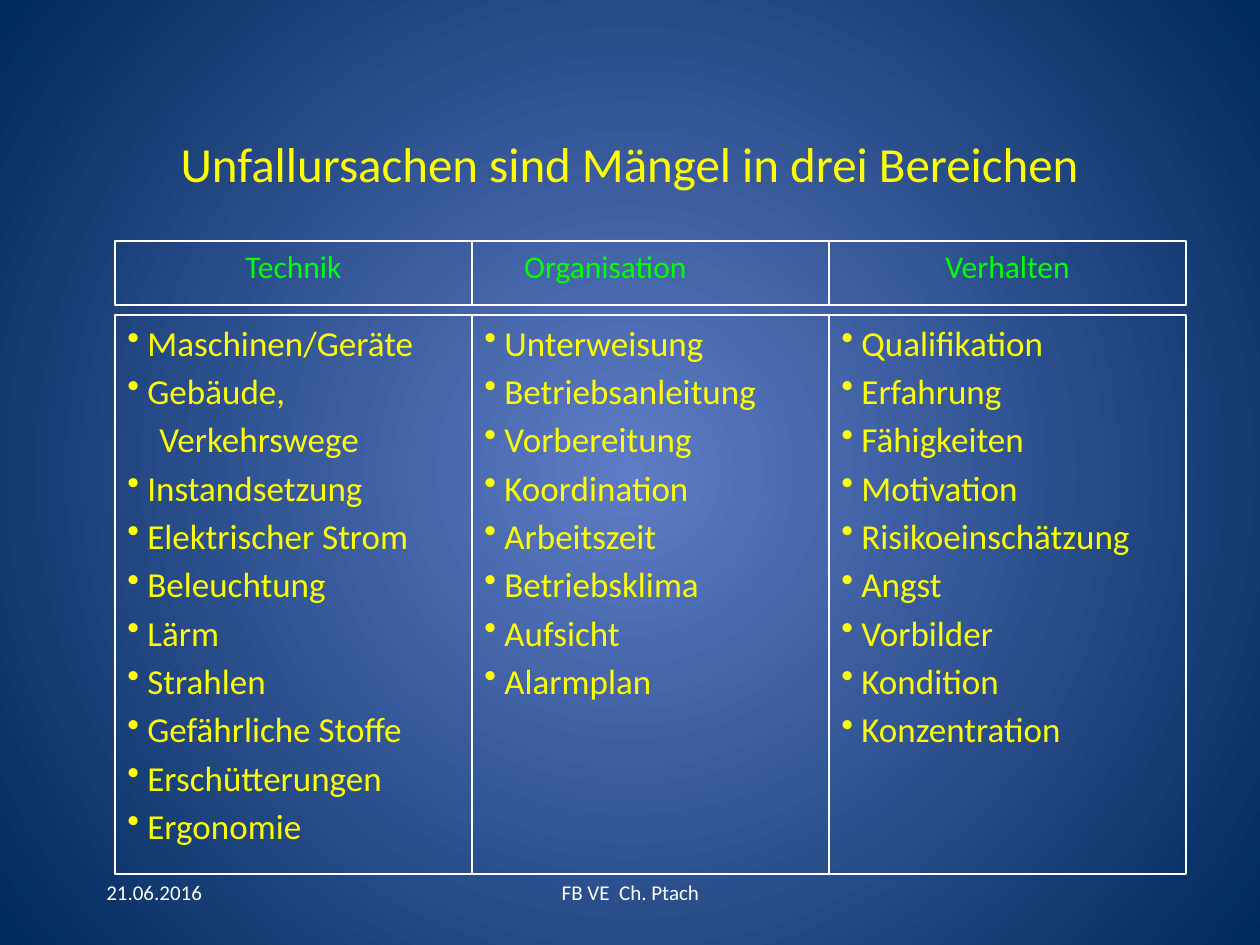
from dataclasses import dataclass

from pptx import Presentation
from pptx.dml.color import RGBColor
from pptx.enum.shapes import MSO_SHAPE
from pptx.enum.text import MSO_ANCHOR, PP_ALIGN
from pptx.oxml import parse_xml
from pptx.oxml.ns import nsdecls, qn
from pptx.util import Pt

RECT = MSO_SHAPE.RECTANGLE
TOP, MIDDLE = MSO_ANCHOR.TOP, MSO_ANCHOR.MIDDLE
LEFT, CENTER = PP_ALIGN.LEFT, PP_ALIGN.CENTER
SCALE = 914400 / 126


@dataclass(frozen=True)
class Theme:
    font: str = "Calibri"
    glow: str = "5E7CC5"
    edge: str = "00295C"
    white: str = "FFFFFF"
    yellow: str = "FFFF00"
    green: str = "00FF00"
    title: int = 28
    head: int = 18
    body: int = 20
    foot: int = 12


THEME = Theme()
START, WIDTH = 115, 357
HANG, DEEP = 20, 32

AREAS = [
    ("Technik", 0, [
        "Maschinen/Geräte", "Gebäude,", "Verkehrswege", "Instandsetzung",
        "Elektrischer Strom", "Beleuchtung", "Lärm", "Strahlen",
        "Gefährliche Stoffe", "Erschütterungen", "Ergonomie"]),
    ("Organisation", 90, [
        "Unterweisung", "Betriebsanleitung", "Vorbereitung", "Koordination",
        "Arbeitszeit", "Betriebsklima", "Aufsicht", "Alarmplan"]),
    ("Verhalten", 0, [
        "Qualifikation", "Erfahrung", "Fähigkeiten", "Motivation",
        "Risikoeinschätzung", "Angst", "Vorbilder", "Kondition",
        "Konzentration"]),
]
PLAIN = {"Verkehrswege"}


def px(n):
    return round(n * SCALE)


def color(code):
    return RGBColor.from_string(code)


def write(shape, lines, size, tint, align=LEFT, anchor=TOP, gap=0):
    frame = shape.text_frame
    frame.word_wrap = True
    frame.vertical_anchor = anchor
    frame.text = "\n".join(lines)
    for para in frame.paragraphs:
        para.alignment = align
        para.space_before = Pt(gap)
        font = para.font
        font.name, font.size = THEME.font, Pt(size)
        font.color.rgb = color(tint)
    return frame


def bullet(para):
    props = para._p.get_or_add_pPr()
    if para.text in PLAIN:
        props.set("marL", str(px(DEEP)))
        return
    props.set("marL", str(px(HANG)))
    props.set("indent", str(-px(HANG)))
    mark = parse_xml(f'<a:buChar {nsdecls("a")} char="•"/>')
    props.insert_element_before(mark, "a:tabLst", "a:defRPr", "a:extLst")


def label(slide, box, text, size, tint, align):
    shape = slide.shapes.add_textbox(*map(px, box))
    write(shape, [text], size, tint, align, MIDDLE)


def panel(slide, box):
    shape = slide.shapes.add_shape(RECT, *map(px, box))
    shape.shadow.inherit = False
    shape.fill.background()
    shape.line.color.rgb = color(THEME.white)
    shape.line.width = Pt(0.75)
    return shape


def column(slide, left, name, shift, items):
    head = panel(slide, (left, 241, WIDTH, 64))
    frame = write(head, [name], THEME.head, THEME.green, CENTER)
    frame.margin_right += px(shift)
    body = panel(slide, (left, 315, WIDTH, 559))
    frame = write(body, items, THEME.body, THEME.yellow, gap=3.6)
    for para in frame.paragraphs:
        bullet(para)


def backdrop(slide):
    fill = slide.background.fill
    fill.gradient()
    for stop, code in zip(fill.gradient_stops, (THEME.glow, THEME.edge)):
        stop.color.rgb = color(code)
    line = next(slide._element.iter(qn("a:lin")))
    ring = parse_xml(
        f'<a:path {nsdecls("a")} path="circle">'
        '<a:fillToRect l="50000" t="50000" r="50000" b="50000"/></a:path>')
    line.getparent().replace(line, ring)


def main():
    deck = Presentation()
    deck.slide_width, deck.slide_height = px(1260), px(945)
    slide = deck.slides.add_slide(deck.slide_layouts[6])
    backdrop(slide)
    label(slide, (94, 861, 262, 63), "21.06.2016",
          THEME.foot, THEME.white, LEFT)
    label(slide, (431, 861, 399, 63), "FB VE  Ch. Ptach",
          THEME.foot, THEME.white, CENTER)
    label(slide, (94, 84, 1071, 158),
          "Unfallursachen sind Mängel in drei Bereichen",
          THEME.title, THEME.yellow, CENTER)
    for i, area in enumerate(AREAS):
        column(slide, START + i * WIDTH, *area)
    deck.save("out.pptx")


if __name__ == "__main__":
    main()
